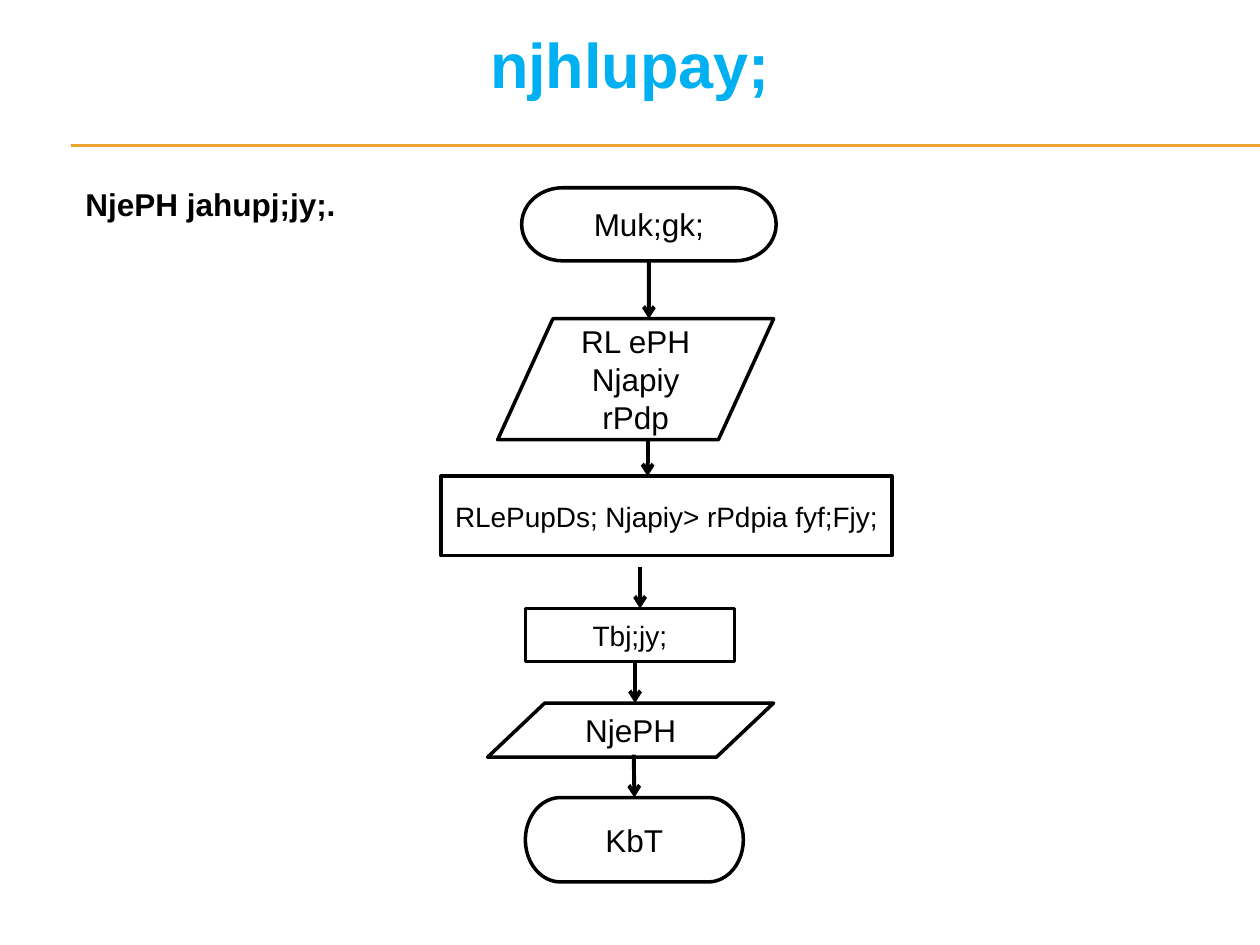
from lxml import etree
from pptx import Presentation
from pptx.dml.color import RGBColor
from pptx.enum.shapes import MSO_CONNECTOR, MSO_SHAPE
from pptx.enum.text import MSO_ANCHOR, MSO_AUTO_SIZE, PP_ALIGN
from pptx.oxml.ns import qn
from pptx.util import Inches, Pt

STRAIGHT = MSO_CONNECTOR.STRAIGHT
TERMINATOR = MSO_SHAPE.FLOWCHART_TERMINATOR
DATA = MSO_SHAPE.FLOWCHART_DATA
RECT = MSO_SHAPE.RECTANGLE
MIDDLE, TOP = MSO_ANCHOR.MIDDLE, MSO_ANCHOR.TOP
CENTER, LEFT = PP_ALIGN.CENTER, PP_ALIGN.LEFT
SITE_TOP, SITE_BOTTOM = 0, 2

THEME = {
    "font": "Arial", "ink": "000000", "title": "00B0F0", "rule": "F0A22E",
    "title_size": 36, "body_size": 18, "small_size": 16,
    "outline": 2, "arrow": 2.25, "rule_width": 0.75,
}

# Content
TITLE = "njhlupay;"
SUBTITLE = "NjePH jahupj;jy;."
RULES_Y = [1.15, 1.16]

# name: preset, (left, top, width, height), text size, lines
STEPS = {
    "start": (TERMINATOR, (4.14, 1.49, 2.02, 0.58), "body_size", ["Muk;gk;"]),
    "input": (DATA, (3.95, 2.53, 2.19, 0.96), "body_size",
              ["RL ePH", "Njapiy", "rPdp"]),
    "mix": (RECT, (3.5, 3.78, 3.58, 0.63), "small_size",
            ["RLePupDs; Njapiy> rPdpia fyf;Fjy;"]),
    "strain": (RECT, (4.17, 4.83, 1.66, 0.42), "small_size", ["Tbj;jy;"]),
    "output": (DATA, (3.87, 5.58, 2.27, 0.43), "body_size", ["NjePH"]),
    "end": (TERMINATOR, (4.17, 6.33, 1.73, 0.67), "body_size", ["KbT"]),
}

# from, to, step joined at the start, step joined at the end
ARROWS = [
    ((5.15, 2.07), (5.15, 2.53), "start", None),
    ((5.14, 3.49), (5.14, 3.78), None, None),
    ((5.08, 4.5), (5.08, 4.83), None, None),
    ((5.04, 5.25), (5.04, 5.58), None, None),
    ((5.03, 5.99), (5.04, 6.33), None, "end"),
]


def color(name):
    return RGBColor.from_string(THEME[name])


def place(sp, box):
    for name, value in zip(("left", "top", "width", "height"), box):
        setattr(sp, name, Inches(value))


def write(sp, lines, size, ink="ink", bold=False, align=CENTER, anchor=MIDDLE,
          wrap=True):
    tf = sp.text_frame
    tf.word_wrap = wrap
    tf.vertical_anchor = anchor
    for i, line in enumerate(lines):
        p = tf.paragraphs[0] if i == 0 else tf.add_paragraph()
        p.alignment = align
        r = p.add_run()
        r.text = line
        fmt = {"name": THEME["font"], "size": Pt(THEME[size]), "bold": bold}
        for name, value in fmt.items():
            setattr(r.font, name, value)
        r.font.color.rgb = color(ink)


def add_line(s, start, end, ink, width, arrow=False):
    points = [Inches(v) for v in (*start, *end)]
    line = s.shapes.add_connector(STRAIGHT, *points)
    line.line.color.rgb = color(ink)
    line.line.width = Pt(THEME[width])
    if arrow:
        etree.SubElement(line.line._get_or_add_ln(), qn("a:tailEnd"), type="arrow")
    etree.SubElement(line._element.spPr, qn("a:effectLst"))
    return line


def main():
    prs = Presentation()
    prs.slide_width, prs.slide_height = Inches(10), Inches(7.5)
    s = prs.slides.add_slide(prs.slide_layouts[5])

    # Header
    for y in RULES_Y:
        add_line(s, (0.56, y), (10, y), "rule", "rule_width")
    title = s.shapes.title
    place(title, (0.25, 0.17, 9.5, 0.67))
    write(title, [TITLE], "title_size", ink="title", bold=True)

    # Flowchart steps
    steps = {}
    for name, (preset, box, size, lines) in STEPS.items():
        sp = s.shapes.add_shape(preset, *[Inches(v) for v in box])
        sp.shadow.inherit = False
        sp.fill.background()
        sp.line.color.rgb = color("ink")
        sp.line.width = Pt(THEME["outline"])
        write(sp, lines, size)
        steps[name] = sp

    # Arrows between steps
    for start, end, source, target in ARROWS:
        line = add_line(s, start, end, "ink", "arrow", arrow=True)
        if source:
            line.begin_connect(steps[source], SITE_BOTTOM)
        if target:
            line.end_connect(steps[target], SITE_TOP)

    # Subtitle
    box = s.shapes.add_textbox(*[Inches(v) for v in (0.58, 1.42, 2.92, 0.4)])
    write(box, [SUBTITLE], "body_size", bold=True, align=LEFT, anchor=TOP)
    box.text_frame.auto_size = MSO_AUTO_SIZE.SHAPE_TO_FIT_TEXT

    prs.save("out.pptx")


if __name__ == "__main__":
    main()
